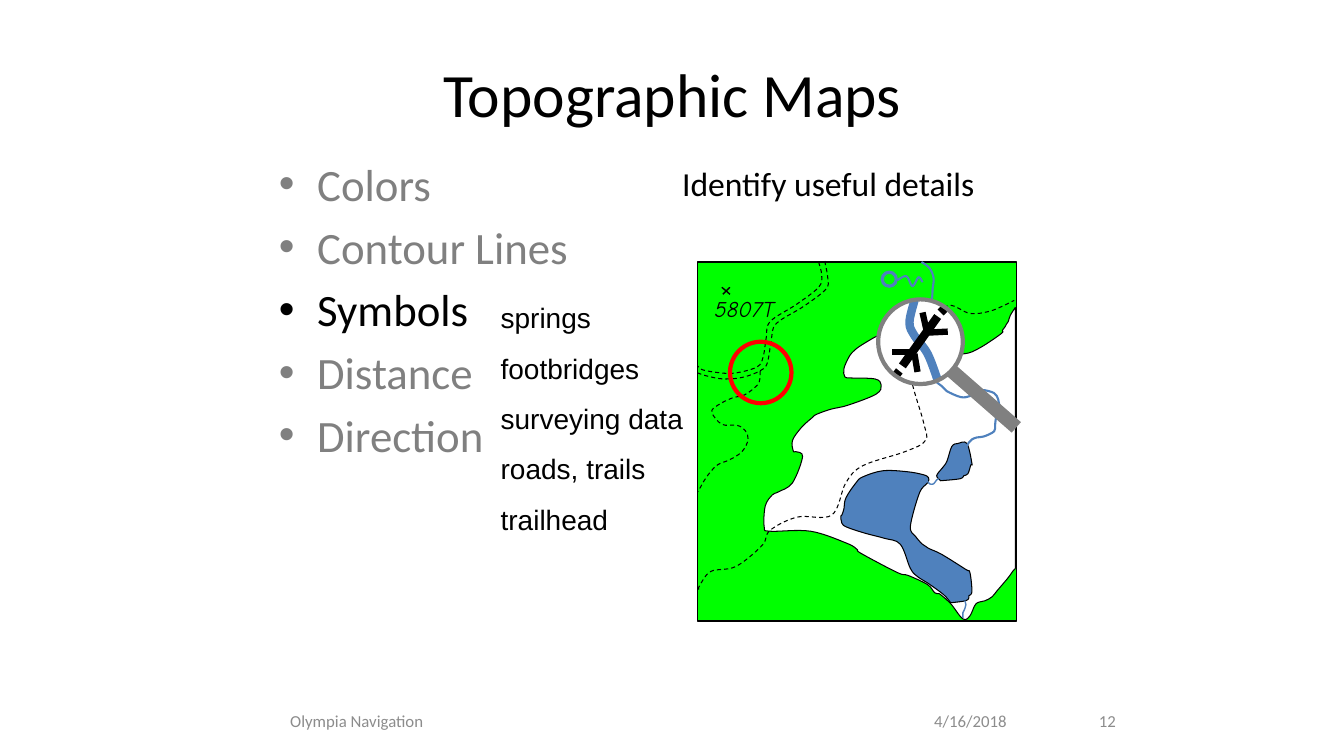
from dataclasses import dataclass

from lxml.etree import SubElement
from pptx import Presentation
from pptx.dml.color import RGBColor as Rgb
from pptx.enum.dml import MSO_LINE as Dash
from pptx.enum.shapes import MSO_CONNECTOR as Connector, MSO_SHAPE as Preset
from pptx.enum.text import MSO_ANCHOR as Anchor, PP_ALIGN as Align
from pptx.oxml.ns import qn
from pptx.util import Inches, Pt

COLUMNS, ROWS = 1333, 750


@dataclass(frozen=True)
class Theme:
    ink: str = "000000"
    paper: str = "FFFFFF"
    muted: str = "808080"
    footer: str = "8C8C8C"
    forest: str = "00FF00"
    water: str = "4F81BD"
    alert: str = "FF0000"
    body_font: str = "Calibri"
    note_font: str = "Arial"
    map_font: str = "Comic Neue"
    title_size: int = 44
    bullet_size: int = 32
    lead_size: int = 24
    note_size: int = 20
    map_size: int = 16
    footer_size: int = 12


def bend(outline):
    segments = list(outline.iter(qn("a:lnTo")))
    corners = [(int(pt.get("x")), int(pt.get("y"))) for pt in outline.iter(qn("a:pt"))]
    padded = [corners[0], *corners, corners[-1]]
    for segment, before, start, end, after in zip(segments, padded, padded[1:], padded[2:], padded[3:]):
        leave = [b + (c - a) / 6 for a, b, c in zip(before, start, end)]
        arrive = [c - (d - b) / 6 for b, c, d in zip(start, end, after)]
        segment.tag = qn("a:cubicBezTo")
        for index, (x, y) in enumerate((leave, arrive)):
            handle = SubElement(segment, qn("a:pt"))
            handle.set("x", str(round(x)))
            handle.set("y", str(round(y)))
            segment.insert(index, handle)


class Sheet:
    def __init__(self, deck, theme):
        self.theme = theme
        self.slide = deck.slides.add_slide(deck.slide_layouts[6])
        self.column = deck.slide_width / COLUMNS
        self.row = deck.slide_height / ROWS

    def spot(self, x, y):
        return round(x * self.column), round(y * self.row)

    def paint(self, shape, fill, line, width, dash=None):
        shape.shadow.inherit = False
        if fill:
            shape.fill.solid()
            shape.fill.fore_color.rgb = Rgb.from_string(fill)
        else:
            shape.fill.background()
        if line:
            self.stroke(shape, line, width, dash)
        else:
            shape.line.fill.background()

    def stroke(self, shape, color, width, dash=None):
        shape.line.color.rgb = Rgb.from_string(color)
        shape.line.width = Pt(width)
        if dash:
            shape.line.dash_style = dash

    def text(self, area, lines, size, font=None, colors=None, align=Align.LEFT,
             anchor=Anchor.TOP, italic=False, bullets=False):
        frame = self.slide.shapes.add_textbox(*self.spot(*area[:2]), *self.spot(*area[2:])).text_frame
        frame.word_wrap = True
        frame.vertical_anchor = anchor
        frame.text = "\n".join(lines)
        for index, paragraph in enumerate(frame.paragraphs):
            paragraph.alignment = align
            if bullets:
                self.bullet(paragraph)
                if index:
                    paragraph.space_before = Pt(6.4)
            style = paragraph.runs[0].font
            style.name = font or self.theme.body_font
            style.size = Pt(size)
            style.italic = italic
            style.color.rgb = Rgb.from_string(colors[index] if colors else self.theme.ink)

    def bullet(self, paragraph):
        properties = paragraph._p.get_or_add_pPr()
        properties.set("marL", str(Inches(0.38)))
        properties.set("indent", str(-Inches(0.38)))
        SubElement(properties, qn("a:buFont")).set("typeface", "Arial")
        SubElement(properties, qn("a:buChar")).set("char", "•")

    def preset(self, kind, area, fill=None, line=None, width=1):
        shape = self.slide.shapes.add_shape(kind, *self.spot(*area[:2]), *self.spot(*area[2:]))
        self.paint(shape, fill, line, width)

    def curve(self, points, line, width, fill=None, dash=None):
        start, *rest = [self.spot(*point) for point in points]
        builder = self.slide.shapes.build_freeform(*start, scale=1.0)
        builder.add_line_segments(rest, close=bool(fill))
        shape = builder.convert_to_shape()
        bend(shape._element.spPr)
        self.paint(shape, fill, line, width, dash)

    def line(self, start, end, color, width):
        link = self.slide.shapes.add_connector(Connector.STRAIGHT, *self.spot(*start), *self.spot(*end))
        self.stroke(link, color, width)
        SubElement(link._element.spPr, qn("a:effectLst"))


CLEARING = [
    (1007, 305), (1002, 313), (1000, 319), (998, 322), (997, 324), (994, 328), (993, 331),
    (972, 345), (956, 351), (933, 348), (930, 333), (928, 330), (926, 319), (924, 312),
    (915, 308), (905, 314), (899, 319), (885, 327), (877, 331), (871, 333), (865, 336),
    (852, 344), (845, 350), (841, 356), (837, 366), (838, 374), (845, 375), (868, 376),
    (874, 382), (869, 391), (841, 402), (824, 406), (810, 411), (806, 414), (795, 424),
    (786, 437), (787, 448), (789, 448), (796, 453), (786, 479), (772, 488), (766, 491),
    (759, 502), (758, 523), (764, 527), (804, 527), (840, 539), (850, 545), (854, 549),
    (890, 568), (901, 571), (920, 580), (927, 588), (931, 589), (933, 590), (943, 599),
    (955, 614), (962, 611), (968, 599), (977, 596), (984, 592), (989, 586), (1000, 573),
    (1005, 566), (1007, 564)]
LARGE_LAKE = [
    (943, 598), (958, 596), (961, 593), (961, 591), (964, 587), (962, 568), (958, 565),
    (934, 550), (921, 544), (915, 540), (908, 532), (903, 522), (912, 489), (920, 479),
    (921, 474), (916, 471), (900, 468), (876, 467), (856, 473), (849, 479), (839, 494),
    (837, 505), (835, 511), (834, 512), (835, 519), (840, 523), (858, 529), (877, 534),
    (893, 540), (903, 564), (910, 572), (921, 579), (936, 590), (943, 598)]
SMALL_LAKE = [
    (933, 477), (952, 475), (956, 472), (960, 470), (963, 461), (964, 460), (959, 440),
    (950, 440), (944, 443), (939, 458), (934, 465), (929, 472), (933, 477)]
LAKE_CHANNEL = [(919, 476), (922, 480), (926, 480), (929, 476), (931, 475)]
OUTLET = [(957, 596), (958, 600), (957, 604), (955, 608), (955, 610), (955, 613)]
LONG_TRAIL = [
    (693, 585), (694, 581), (705, 567), (730, 562), (756, 541), (764, 526), (791, 513),
    (825, 511), (839, 479), (856, 462), (898, 448), (918, 437), (916, 419), (903, 370),
    (911, 343), (925, 327), (926, 314), (942, 303), (962, 311), (981, 309), (996, 303),
    (1006, 298)]
STREAM = [
    (958, 444), (961, 439), (964, 436), (969, 434), (976, 433), (986, 428), (987, 422),
    (988, 414), (991, 405), (990, 396), (986, 390), (976, 387), (972, 387), (967, 390),
    (962, 393), (953, 394), (939, 388), (934, 383), (927, 377), (920, 364), (915, 351),
    (911, 334), (913, 315), (918, 303), (924, 297), (925, 287), (926, 276), (922, 266),
    (914, 260)]
ROAD_EDGES = [
    [(812, 260), (815, 273), (812, 285), (790, 302), (764, 319), (760, 335), (757, 354),
     (751, 364), (730, 370), (715, 370), (697, 367), (692, 363)],
    [(818, 259), (821, 276), (819, 287), (797, 304), (770, 321), (765, 337), (762, 356),
     (757, 366), (738, 374), (718, 376), (701, 373), (692, 370)]]
SIDE_TRAIL = [
    (754, 368), (753, 379), (748, 385), (738, 392), (726, 395), (712, 402), (706, 409),
    (716, 421), (731, 422), (739, 427), (742, 436), (736, 448), (724, 456), (712, 461),
    (704, 469), (697, 479), (695, 483), (692, 488)]
LENS_STREAM = [(930, 377), (920, 351), (907, 333), (902, 320), (907, 298)]
FOOTBRIDGE = [
    ((895, 363), (930, 314), 6), ((906, 349), (885, 349), 4.5), ((910, 369), (907, 351), 4.5),
    ((920, 330), (940, 329), 4.5), ((915, 310), (919, 328), 4.5),
    ((892, 368), (888, 373), 6), ((938, 305), (933, 310), 6)]
SPRING_RUN = [(890, 278), (899, 274), (905, 284), (911, 275), (915, 280)]


def draw_terrain(sheet):
    theme = sheet.theme
    sheet.preset(Preset.RECTANGLE, (692, 260, 316, 356), theme.forest, theme.ink)
    for outline, fill in ((CLEARING, theme.paper), (LARGE_LAKE, theme.water), (SMALL_LAKE, theme.water)):
        sheet.curve(outline, theme.ink, 0.75, fill)
    for channel in (LAKE_CHANNEL, OUTLET):
        sheet.curve(channel, theme.water, 1)
    sheet.curve(LONG_TRAIL, theme.ink, 0.75, dash=Dash.DASH)
    sheet.curve(STREAM, theme.water, 1.5)


def draw_magnifier(sheet):
    theme = sheet.theme
    lens = (871, 297, 84, 84)
    sheet.preset(Preset.OVAL, lens, theme.paper)
    sheet.curve(LENS_STREAM, theme.water, 6)
    for start, end, width in FOOTBRIDGE:
        sheet.line(start, end, theme.ink, width)
    sheet.preset(Preset.OVAL, lens, line=theme.muted, width=3)
    sheet.line((944, 368), (1008, 424), theme.muted, 10)


def draw_symbols(sheet):
    theme = sheet.theme
    for trail in (*ROAD_EDGES, SIDE_TRAIL):
        sheet.curve(trail, theme.ink, 0.75, dash=Dash.DASH)
    sheet.preset(Preset.OVAL, (724, 339, 61, 61), line=theme.alert, width=3)
    for start, end in (((716, 285), (724, 292)), ((717, 292), (724, 285))):
        sheet.line(start, end, theme.ink, 1)
    sheet.text((699, 288, 100, 37), ["5807T"], theme.map_size, theme.map_font, italic=True)
    sheet.preset(Preset.OVAL, (875, 270, 14, 14), line=theme.water, width=2.25)
    sheet.curve(SPRING_RUN, theme.water, 1.5)


def main():
    deck = Presentation()
    deck.slide_width, deck.slide_height = Inches(13.33), Inches(7.5)
    theme = Theme()
    sheet = Sheet(deck, theme)
    sheet.text((67, 30, 1200, 125), ["Topographic Maps"], theme.title_size,
               align=Align.CENTER, anchor=Anchor.MIDDLE)
    topics = ["Colors", "Contour Lines", "Symbols", "Distance", "Direction"]
    sheet.text((266.7, 150.4, 308, 517), topics, theme.bullet_size, bullets=True,
               colors=[theme.ink if topic == "Symbols" else theme.muted for topic in topics])
    draw_terrain(sheet)
    sheet.text((666.7, 157, 400, 62), ["Identify useful details"], theme.lead_size)
    draw_magnifier(sheet)
    draw_symbols(sheet)
    details = ["springs", "footbridges", "surveying data", "roads, trails", "trailhead"]
    for index, detail in enumerate(details):
        sheet.text((486.7, 293.4 + 50 * index, 210, 44), [detail], theme.note_size, theme.note_font)
    for left, width, label, align in ((916.7, 100, "4/16/2018", Align.LEFT),
                                      (278, 300, "Olympia Navigation", Align.LEFT),
                                      (1016.7, 100, "12", Align.RIGHT)):
        sheet.text((left, 700, width, 30), [label], theme.footer_size,
                   colors=[theme.footer], align=align, anchor=Anchor.MIDDLE)
    deck.save("out.pptx")


if __name__ == "__main__":
    main()
